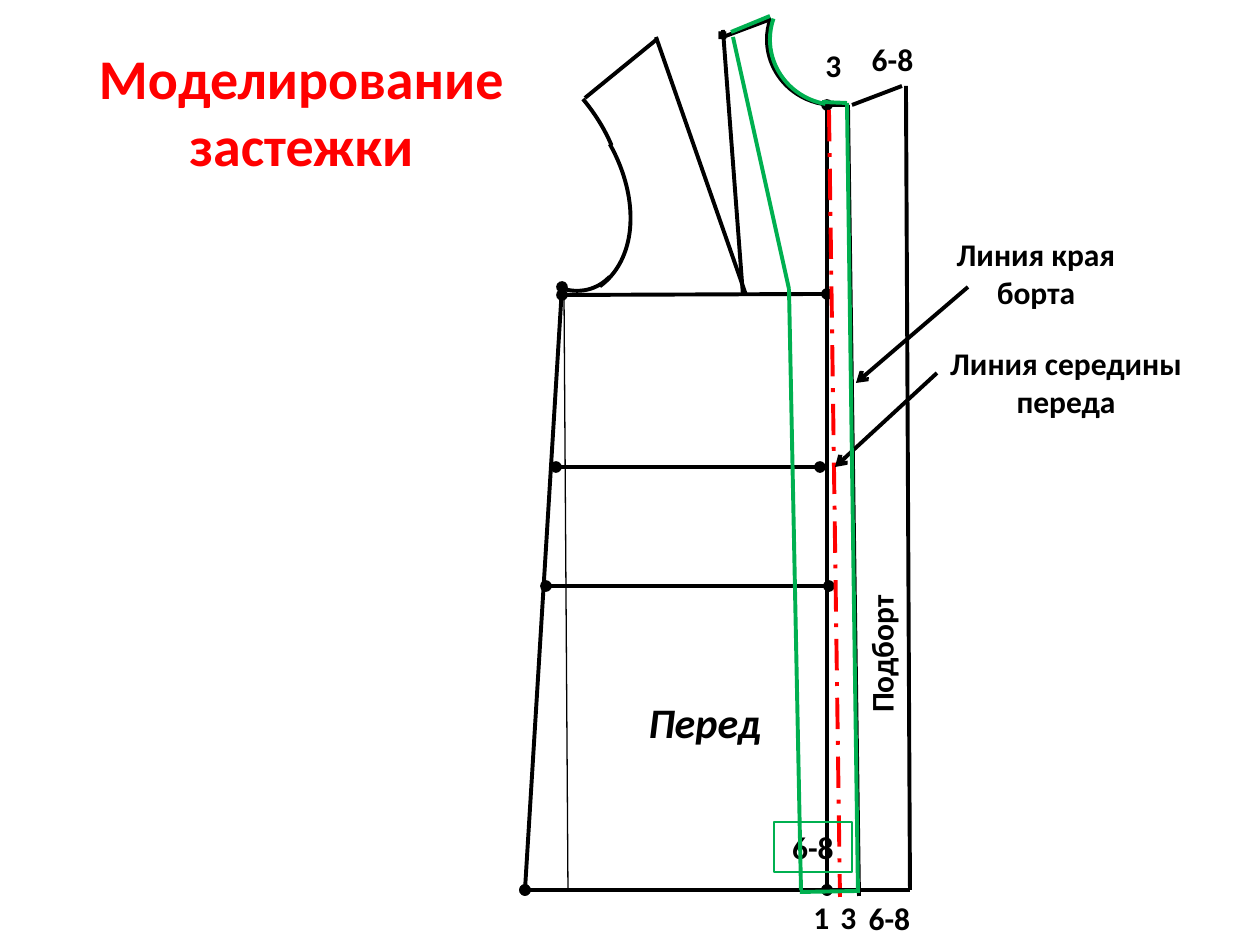
import pptx
import pptx.util
import pptx.dml.color
import pptx.enum.dml
import pptx.enum.shapes
import pptx.enum.text
import pptx.oxml.ns
import lxml.etree

EMU_PER_PX = 914400 / 126
COLORS = {"black": "000000", "red": "FF0000", "green": "00B050"}
THICK, THIN = 2.25, 0.75
SHAPES = pptx.enum.shapes.MSO_SHAPE
ALIGN = pptx.enum.text.PP_ALIGN

HEM_Y = 890
CENTER_X = 827
NECK_Y = 105
LABEL_H = 50
NECK_ANGLES = (60.378, 118.834)

# Each line: x1, y1, x2, y2
DOTTED_LINES = [
    (525, HEM_Y, CENTER_X, HEM_Y),
    (CENTER_X, NECK_Y, CENTER_X, HEM_Y),
    (562, 295, CENTER_X, 294),
    (556, 467, 820, 467),
    (546, 586, 829, 586),
    (562, 287, 525, HEM_Y),
]
DART_AND_SHOULDER = [
    (743, 295, 723, 30),
    (746, 295, 656, 37),
    (656, 40, 585, 98),
    (771, 19, 723, 37),
]
FACING_LINES = [
    (829, HEM_Y, 910, HEM_Y),
    (CENTER_X, NECK_Y, 848, NECK_Y),
    (848, NECK_Y, 859, 896),
    (852, NECK_Y, 902, 86),
    (906, 86, 910, HEM_Y),
]
GREEN_OUTLINE = [
    (822, 102, 847, 103),
    (770, 16, 731, 32),
    (800, 892, 858, 891),
    (847, 103, 858, 893),
    (733, 37, 789, 289),
    (789, 289, 801, HEM_Y),
]
# Each armhole arc: box, angles, rotation
ARMHOLE_ARCS = [
    ((318, 43, 319, 239), (174.642, 188.856), 37.9),
    ((505, 175, 129, 106), (205.962, 16.808), 67.4),
    ((393, 88, 261, 185), (169.779, 0), 54.2),
]
CENTERED_LABELS = [
    ("Линия середины переда", (937, 338, 258, 89)),
    ("Линия края борта", (927, 229, 218, 89)),
    ("3", (824, 892, 49, LABEL_H)),
    ("6-8", (845, 893, 89, LABEL_H)),
    ("6-8", (848, 34, 89, LABEL_H)),
]
LEFT_LABELS = [
    ("1", (801, 892, 49, LABEL_H)),
    ("3", (813, 40, 49, LABEL_H)),
]


def px(*lengths):
    return [pptx.util.Emu(round(length * EMU_PER_PX)) for length in lengths]


def rgb(color):
    return pptx.dml.color.RGBColor.from_string(COLORS[color])


def style_line(line, color, width):
    line.color.rgb = rgb(color)
    line.width = pptx.util.Pt(width)


def add_line(slide, ends, color="black", width=THICK, dash=None, head=None, tail=None):
    connector = slide.shapes.add_connector(
        pptx.enum.shapes.MSO_CONNECTOR.STRAIGHT, *px(*ends))
    style_line(connector.line, color, width)
    if dash:
        connector.line.dash_style = dash
    qn = pptx.oxml.ns.qn
    properties = connector.element.spPr
    outline = properties.find(qn("a:ln"))
    for tag, end in (("a:headEnd", head), ("a:tailEnd", tail)):
        if end:
            lxml.etree.SubElement(outline, qn(tag), type=end)
    lxml.etree.SubElement(properties, qn("a:effectLst"))


def add_outline(slide, kind, box, color="black", width=THICK):
    """Add an unfilled preset shape."""
    shape = slide.shapes.add_shape(kind, *px(*box))
    shape.shadow.inherit = False
    shape.fill.background()
    style_line(shape.line, color, width)
    return shape


def add_arc(slide, box, angles, rotation=0, color="black"):
    arc = add_outline(slide, SHAPES.ARC, box, color)
    arc.adjustments[0], arc.adjustments[1] = angles
    arc.rotation = rotation


def write_text(shape, text, size=18, color="black", font="Calibri",
               bold=True, italic=False, align=ALIGN.CENTER):
    frame = shape.text_frame
    frame.word_wrap = True
    frame.auto_size = pptx.enum.text.MSO_AUTO_SIZE.SHAPE_TO_FIT_TEXT
    frame.vertical_anchor = pptx.enum.text.MSO_ANCHOR.TOP
    paragraph = frame.paragraphs[0]
    paragraph.alignment = align
    run = paragraph.add_run()
    run.text = text
    run.font.size = pptx.util.Pt(size)
    run.font.name = font
    run.font.bold = bold
    run.font.italic = italic
    run.font.color.rgb = rgb(color)


def add_label(slide, text, box, rotation=0, **text_format):
    label = slide.shapes.add_textbox(*px(*box))
    label.rotation = rotation
    write_text(label, text, **text_format)


def draw_front_pattern(slide):
    for box, angles, rotation in ARMHOLE_ARCS:
        add_arc(slide, box, angles, rotation)
    add_arc(slide, (767, -26, 135, 131), NECK_ANGLES)
    for ends in DOTTED_LINES:
        add_line(slide, ends, head="oval", tail="oval")
    for ends in DART_AND_SHOULDER:
        add_line(slide, ends)
    add_line(slide, (564, 290, 568, 892), width=THIN)
    add_label(slide, "▪", (698, 8, 49, LABEL_H), font="Arial", bold=False)
    add_label(slide, "Перед", (612, 690, 185, 63), size=24, italic=True)


def draw_closure(slide):
    """Draw the front middle, the closure edge and the cut-on facing."""
    add_line(slide, (829, 110, 840, 897), color="red",
             dash=pptx.enum.dml.MSO_LINE.LONG_DASH_DOT)
    for ends in FACING_LINES:
        add_line(slide, ends)
    add_line(slide, (835, 467, 937, 373), head="arrow")
    add_line(slide, (968, 287, 856, 383), tail="arrow")


def draw_labels(slide):
    for text, box in CENTERED_LABELS:
        add_label(slide, text, box)
    for text, box in LEFT_LABELS:
        add_label(slide, text, box, align=ALIGN.LEFT)
    add_label(slide, "Подборт", (782, 629, 198, LABEL_H), rotation=270)
    facing_width = add_outline(slide, SHAPES.RECTANGLE, (774, 822, 78, LABEL_H),
                               "green", THIN)
    write_text(facing_width, "6-8")


def draw_green_facing(slide):
    add_arc(slide, (770, -26, 135, 131), NECK_ANGLES, color="green")
    for ends in GREEN_OUTLINE:
        add_line(slide, ends, color="green")


def main():
    presentation = pptx.Presentation()
    presentation.slide_width, presentation.slide_height = px(1260, 945)
    slide = presentation.slides.add_slide(presentation.slide_layouts[6])
    add_label(slide, "Моделирование застежки", (44, 37, 515, 149),
              size=32, color="red")
    draw_front_pattern(slide)
    draw_closure(slide)
    draw_labels(slide)
    draw_green_facing(slide)
    presentation.save("out.pptx")


if __name__ == "__main__":
    main()
